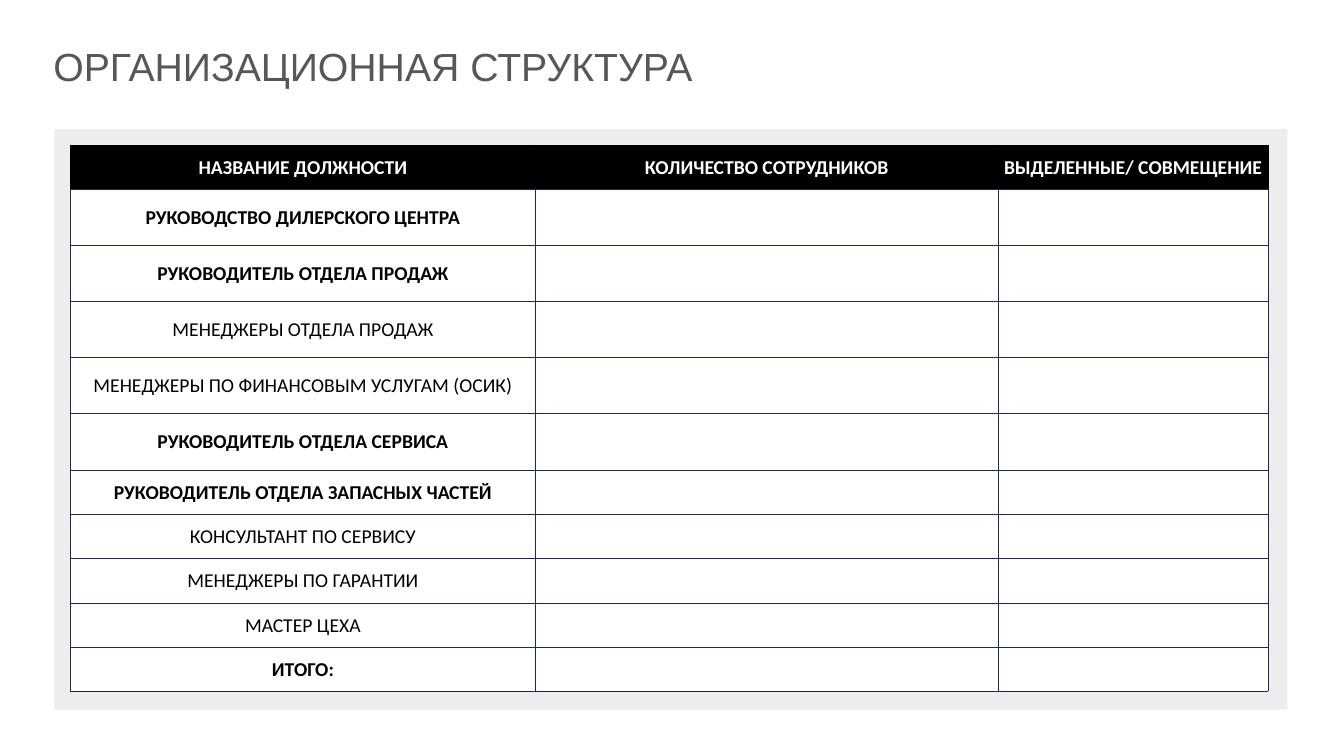
from dataclasses import dataclass

import pptx
import pptx.dml.color
import pptx.enum.shapes
import pptx.enum.text
import pptx.oxml.ns
import pptx.table
import pptx.util
from lxml import etree

RGBColor = pptx.dml.color.RGBColor
Inches = pptx.util.Inches
Pt = pptx.util.Pt

BLACK = RGBColor(0x00, 0x00, 0x00)
WHITE = RGBColor(0xFF, 0xFF, 0xFF)
TITLE_GRAY = RGBColor(0x57, 0x57, 0x56)
PANEL_GRAY = RGBColor(0xED, 0xED, 0xED)
GRID_NAVY = RGBColor(0x1B, 0x29, 0x54)

TABLE_HEIGHT = 5.42
SHORT_ROW = 0.44
COLUMN_WIDTHS = (4.61, 4.59, 2.68)
HEADINGS = ("НАЗВАНИЕ ДОЛЖНОСТИ", "КОЛИЧЕСТВО СОТРУДНИКОВ", "ВЫДЕЛЕННЫЕ/ СОВМЕЩЕНИЕ")


@dataclass(frozen=True)
class Position:
    name: str
    bold: bool = False
    tall: bool = False


POSITIONS = (
    Position("РУКОВОДСТВО ДИЛЕРСКОГО ЦЕНТРА", bold=True, tall=True),
    Position("РУКОВОДИТЕЛЬ ОТДЕЛА ПРОДАЖ", bold=True, tall=True),
    Position("МЕНЕДЖЕРЫ ОТДЕЛА ПРОДАЖ", tall=True),
    Position("МЕНЕДЖЕРЫ ПО ФИНАНСОВЫМ УСЛУГАМ (ОСИК)", tall=True),
    Position("РУКОВОДИТЕЛЬ ОТДЕЛА СЕРВИСА", bold=True, tall=True),
    Position("РУКОВОДИТЕЛЬ ОТДЕЛА ЗАПАСНЫХ ЧАСТЕЙ", bold=True),
    Position("КОНСУЛЬТАНТ ПО СЕРВИСУ"),
    Position("МЕНЕДЖЕРЫ ПО ГАРАНТИИ"),
    Position("МАСТЕР ЦЕХА"),
    Position("ИТОГО:", bold=True),
)


def set_border(cell: pptx.table._Cell, side: str, color: RGBColor, width: float) -> None:
    qn = pptx.oxml.ns.qn
    properties = cell._tc.get_or_add_tcPr()
    line = etree.SubElement(properties, qn(f"a:ln{side}"), w=str(int(Pt(width))))
    fill = etree.SubElement(line, qn("a:solidFill"))
    etree.SubElement(fill, qn("a:srgbClr"), val=str(color))


def style_cell(cell: pptx.table._Cell, header: bool = False) -> None:
    for side in "LRTB":
        if header and side != "B":
            set_border(cell, side, BLACK, 1)
        else:
            set_border(cell, side, GRID_NAVY, 0.25)
    cell.fill.solid()
    cell.fill.fore_color.rgb = BLACK if header else WHITE


def write_cell(cell: pptx.table._Cell, text: str, color: RGBColor, bold: bool) -> None:
    cell.vertical_anchor = pptx.enum.text.MSO_ANCHOR.MIDDLE
    cell.margin_left = cell.margin_right = cell.margin_top = Inches(0.01)
    cell.margin_bottom = 0
    paragraph = cell.text_frame.paragraphs[0]
    paragraph.alignment = pptx.enum.text.PP_ALIGN.CENTER
    run = paragraph.add_run()
    run.text = text
    run.font.name = "Calibri"
    run.font.size = Pt(14)
    run.font.bold = bold
    run.font.color.rgb = color


def add_title(slide: pptx.slide.Slide) -> None:
    title = slide.shapes.title
    title.left, title.top = Inches(0.43), Inches(0.42)
    title.width, title.height = Inches(7.12), Inches(0.42)
    frame = title.text_frame
    frame.word_wrap = True
    frame.auto_size = pptx.enum.text.MSO_AUTO_SIZE.NONE
    frame.vertical_anchor = pptx.enum.text.MSO_ANCHOR.TOP
    paragraph = frame.paragraphs[0]
    paragraph.alignment = pptx.enum.text.PP_ALIGN.LEFT
    paragraph.line_spacing = 0.9
    run = paragraph.add_run()
    run.text = "ОРГАНИЗАЦИОННАЯ СТРУКТУРА"
    run.font.name = "Arial"
    run.font.size = Pt(28)
    run.font.color.rgb = TITLE_GRAY


def add_panel(slide: pptx.slide.Slide) -> None:
    panel = slide.shapes.add_shape(
        pptx.enum.shapes.MSO_SHAPE.RECTANGLE,
        Inches(0.54), Inches(1.28), Inches(12.23), Inches(5.76),
    )
    panel.shadow.inherit = False
    panel.fill.solid()
    panel.fill.fore_color.rgb = PANEL_GRAY
    panel.line.fill.background()


def add_staff_table(slide: pptx.slide.Slide) -> None:
    table = slide.shapes.add_table(
        len(POSITIONS) + 1, len(HEADINGS),
        Inches(0.7), Inches(1.44), Inches(sum(COLUMN_WIDTHS)), Inches(TABLE_HEIGHT),
    ).table
    table.horz_banding = False
    for column, width in zip(table.columns, COLUMN_WIDTHS):
        column.width = Inches(width)

    tall_count = sum(position.tall for position in POSITIONS)
    short_count = len(POSITIONS) + 1 - tall_count
    tall_row = (TABLE_HEIGHT - short_count * SHORT_ROW) / tall_count

    table.rows[0].height = Inches(SHORT_ROW)
    for cell, heading in zip(table.rows[0].cells, HEADINGS):
        style_cell(cell, header=True)
        write_cell(cell, heading, WHITE, bold=True)

    for index, position in enumerate(POSITIONS, start=1):
        row = table.rows[index]
        row.height = Inches(tall_row if position.tall else SHORT_ROW)
        for cell in row.cells:
            style_cell(cell)
        write_cell(row.cells[0], position.name, BLACK, position.bold)


def main() -> None:
    presentation = pptx.Presentation()
    presentation.slide_width = Inches(13.33)
    presentation.slide_height = Inches(7.5)
    slide = presentation.slides.add_slide(presentation.slide_layouts[5])
    add_title(slide)
    add_panel(slide)
    add_staff_table(slide)
    presentation.save("out.pptx")


if __name__ == "__main__":
    main()
